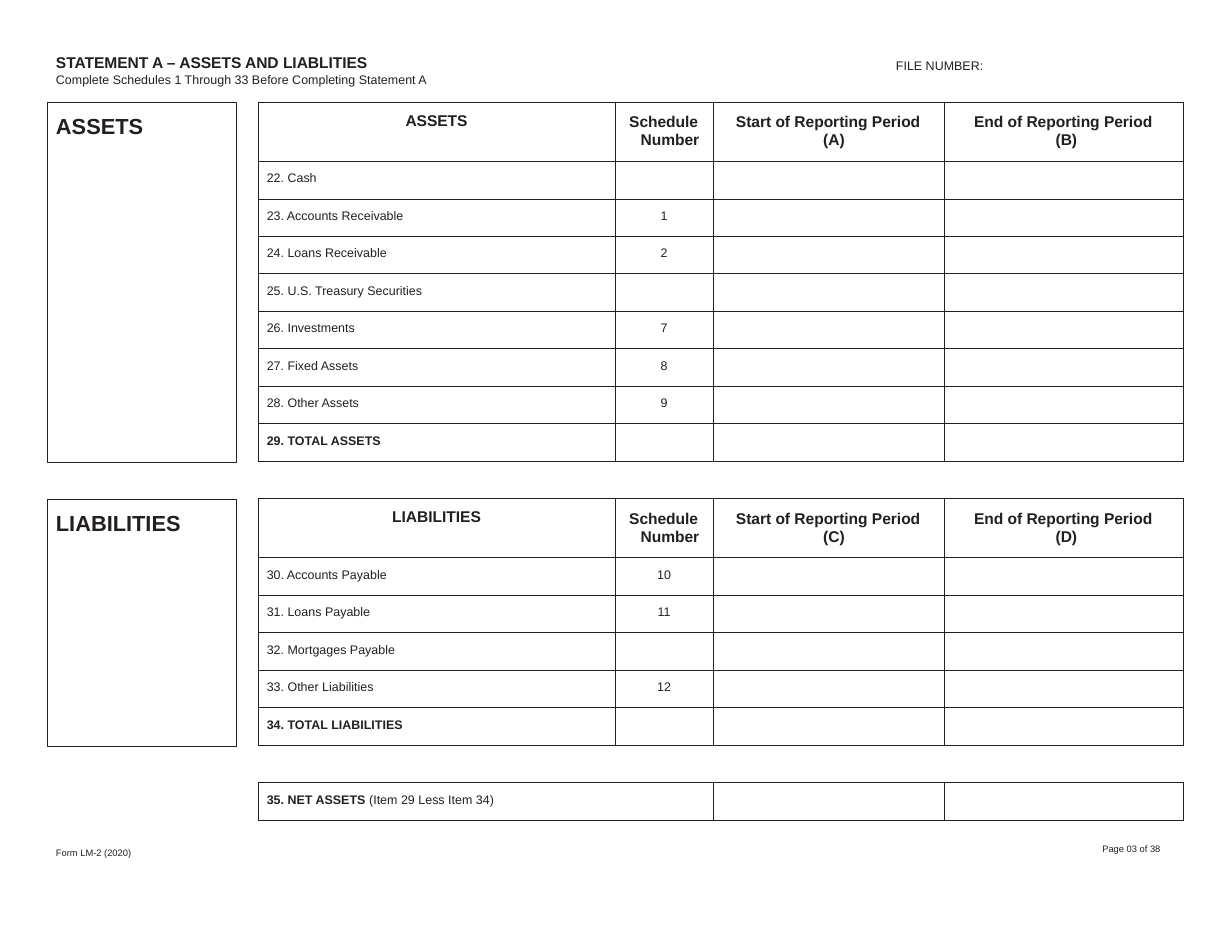
from pptx import Presentation
from pptx.dml.color import RGBColor
from pptx.enum.shapes import MSO_SHAPE
from pptx.enum.text import MSO_ANCHOR, PP_ALIGN
from pptx.oxml import parse_xml
from pptx.oxml.ns import nsdecls
from pptx.util import Cm, Pt

INK = "231F20"
COLUMNS = [8.1, 2.22, 5.24, 5.42]
TABLE_LEFT, HEADER_HEIGHT, ROW_HEIGHT = 5.85, 1.35, 0.85
CELL_TOP, TEXT_INDENT = 0.23, 0.2

ASSETS = [
    ("22. Cash", ""),
    ("23. Accounts Receivable", "1"),
    ("24. Loans Receivable", "2"),
    ("25. U.S. Treasury Securities", ""),
    ("26. Investments", "7"),
    ("27. Fixed Assets", "8"),
    ("28. Other Assets", "9"),
    ("29. TOTAL ASSETS", ""),
]
LIABILITIES = [
    ("30. Accounts Payable", "10"),
    ("31. Loans Payable", "11"),
    ("32. Mortgages Payable", ""),
    ("33. Other Liabilities", "12"),
    ("34. TOTAL LIABILITIES", ""),
]


def color(value):
    return RGBColor.from_string(value)


class FormPage:
    """Draws the elements of a financial form on one slide."""

    def __init__(self, slide, font="Arial", ink=INK):
        self.slide, self.font, self.ink = slide, font, ink

    def style(self, paragraph, size, bold=False, align=PP_ALIGN.LEFT, line=None):
        paragraph.font.name = self.font
        paragraph.font.size = Pt(size)
        paragraph.font.bold = bold
        paragraph.font.color.rgb = color(self.ink)
        paragraph.alignment = align
        if line:
            paragraph.line_spacing = Pt(line)

    def indent(self, paragraph, left, first=0.0):
        properties = paragraph._p.get_or_add_pPr()
        properties.set("marL", str(Cm(left)))
        properties.set("indent", str(Cm(first)))

    def set_margins(self, target, top=0.0):
        target.margin_left = target.margin_right = target.margin_bottom = 0
        target.margin_top = Cm(top)

    def text(self, left, top, width, height, lines):
        frame = self.slide.shapes.add_textbox(
            Cm(left), Cm(top), Cm(width), Cm(height)).text_frame
        frame.word_wrap = True
        self.set_margins(frame)
        frame.text = "\n".join(words for words, *_ in lines)
        for paragraph, (_, size, bold, spacing) in zip(frame.paragraphs, lines):
            self.style(paragraph, size, bold, line=spacing)

    def side_box(self, top, height, title):
        shape = self.slide.shapes.add_shape(
            MSO_SHAPE.RECTANGLE, Cm(1.07), Cm(top), Cm(4.29), Cm(height))
        shape.shadow.inherit = False
        shape.fill.background()
        shape.line.color.rgb = color(self.ink)
        shape.line.width = Pt(0.5)
        frame = shape.text_frame
        frame.vertical_anchor = MSO_ANCHOR.TOP
        self.set_margins(frame, CELL_TOP)
        frame.text = title
        self.style(frame.paragraphs[0], 14, True)
        self.indent(frame.paragraphs[0], TEXT_INDENT)

    def border(self, cell):
        properties = cell._tc.get_or_add_tcPr()
        for position, side in enumerate(("lnL", "lnR", "lnT", "lnB")):
            properties.insert(position, parse_xml(
                f'<a:{side} {nsdecls("a")} w="{Pt(0.5)}"><a:solidFill>'
                f'<a:srgbClr val="{self.ink}"/></a:solidFill></a:{side}>'))

    def table(self, top, columns, rows):
        table = self.slide.shapes.add_table(
            len(rows), len(columns), Cm(TABLE_LEFT), Cm(top),
            Cm(sum(columns)), Cm(sum(rows))).table
        table.first_row = table.horz_banding = False
        for column, width in zip(table.columns, columns):
            column.width = Cm(width)
        for row, height in zip(table.rows, rows):
            row.height = Cm(height)
        for cell in table.iter_cells():
            cell.fill.background()
            self.border(cell)
            self.set_margins(cell, CELL_TOP)
            self.style(cell.text_frame.paragraphs[0], 8)
        return table

    def fill_cell(self, cell, words, size=8, bold=False, align=PP_ALIGN.LEFT, line=None):
        cell.text = words
        paragraph = cell.text_frame.paragraphs[0]
        self.style(paragraph, size, bold, align, line)
        return paragraph

    def schedule(self, top, title, periods, items):
        heights = [HEADER_HEIGHT] + [ROW_HEIGHT] * len(items)
        self.side_box(top + 0.02, sum(heights), title)
        table = self.table(top, COLUMNS, heights)
        self.fill_cell(table.cell(0, 0), title, 10, True, PP_ALIGN.CENTER)
        start, end = periods
        headings = [
            ("Schedule\vNumber", 0.58, -0.26),
            (f"Start of Reporting Period\v({start})", 2.5, -1.98),
            (f"End of Reporting Period\v({end})", 2.53, -1.85),
        ]
        for column, (words, left, first) in enumerate(headings, 1):
            cell = table.cell(0, column)
            cell.margin_top = Cm(0.26)
            paragraph = self.fill_cell(cell, words, 10, True, line=11.5)
            self.indent(paragraph, left, first)
        for row, (label, number) in enumerate(items, 1):
            paragraph = self.fill_cell(table.cell(row, 0), label, bold="TOTAL" in label)
            self.indent(paragraph, TEXT_INDENT)
            if number:
                self.fill_cell(table.cell(row, 1), number, align=PP_ALIGN.CENTER)

    def net_assets(self, top):
        columns = [sum(COLUMNS[:2])] + COLUMNS[2:]
        table = self.table(top, columns, [ROW_HEIGHT])
        paragraph = table.cell(0, 0).text_frame.paragraphs[0]
        self.indent(paragraph, TEXT_INDENT)
        for words, bold in (("35. NET ASSETS ", True), ("(Item 29 Less Item 34)", False)):
            run = paragraph.add_run()
            run.text = words
            run.font.bold = bold


def main():
    presentation = Presentation()
    presentation.slide_width, presentation.slide_height = Cm(27.94), Cm(21.59)
    page = FormPage(presentation.slides.add_slide(presentation.slide_layouts[6]))
    page.text(1.27, 1.22, 9, 0.8, [
        ("STATEMENT A – ASSETS AND LIABLITIES", 10, True, 11.8),
        ("Complete Schedules 1 Through 33 Before Completing Statement A", 8, False, 9.4),
    ])
    page.text(20.32, 1.32, 2.4, 0.4, [("FILE NUMBER:", 8, False, None)])
    page.schedule(2.31, "ASSETS", "AB", ASSETS)
    page.schedule(11.3, "LIABILITIES", "CD", LIABILITIES)
    page.net_assets(17.75)
    page.text(1.27, 19.22, 4.6, 0.28, [("Form LM-2 (2020)", 6, False, None)])
    page.text(25, 19.13, 2.05, 0.28, [("Page 03 of 38", 6, False, None)])
    presentation.save("out.pptx")


if __name__ == "__main__":
    main()
